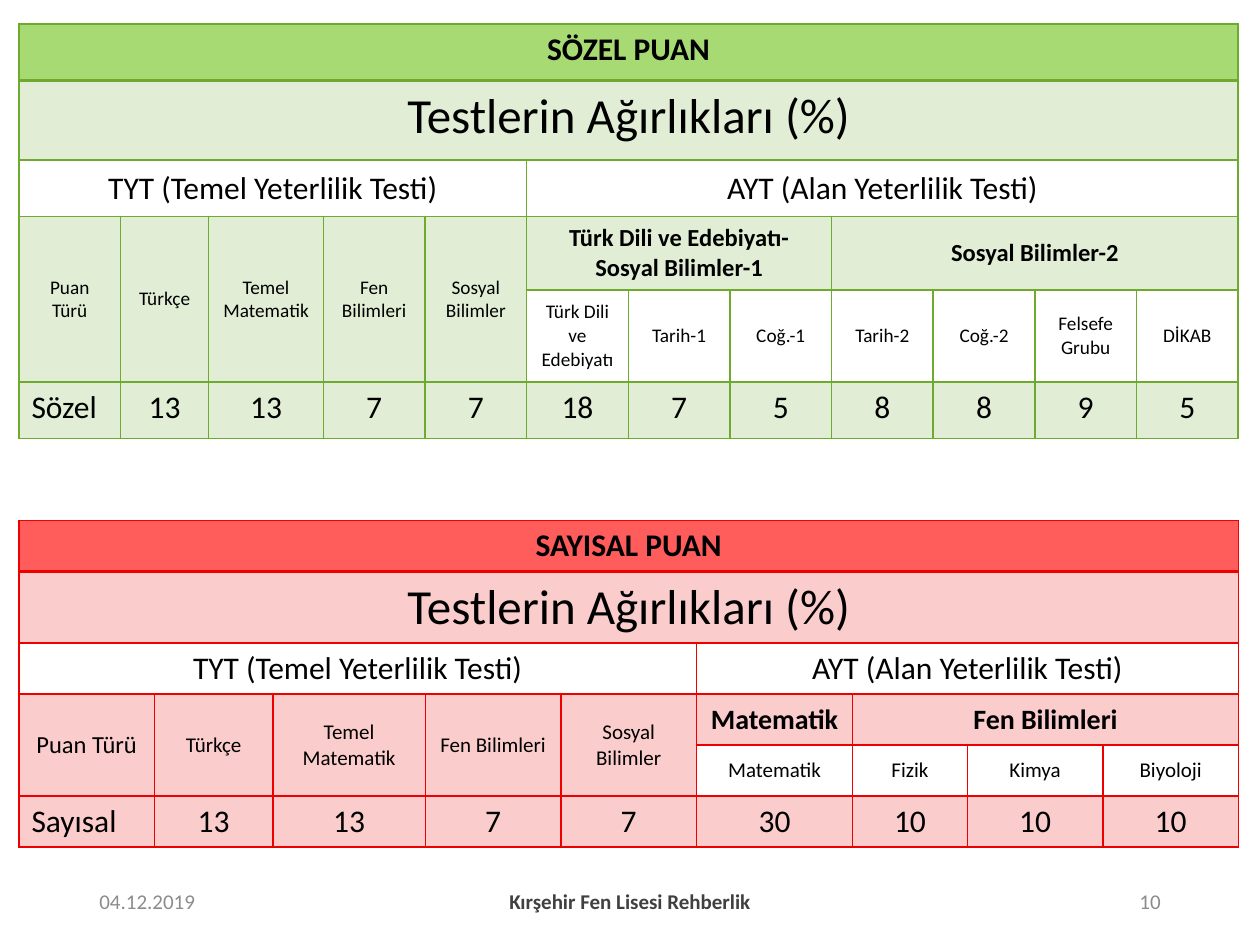
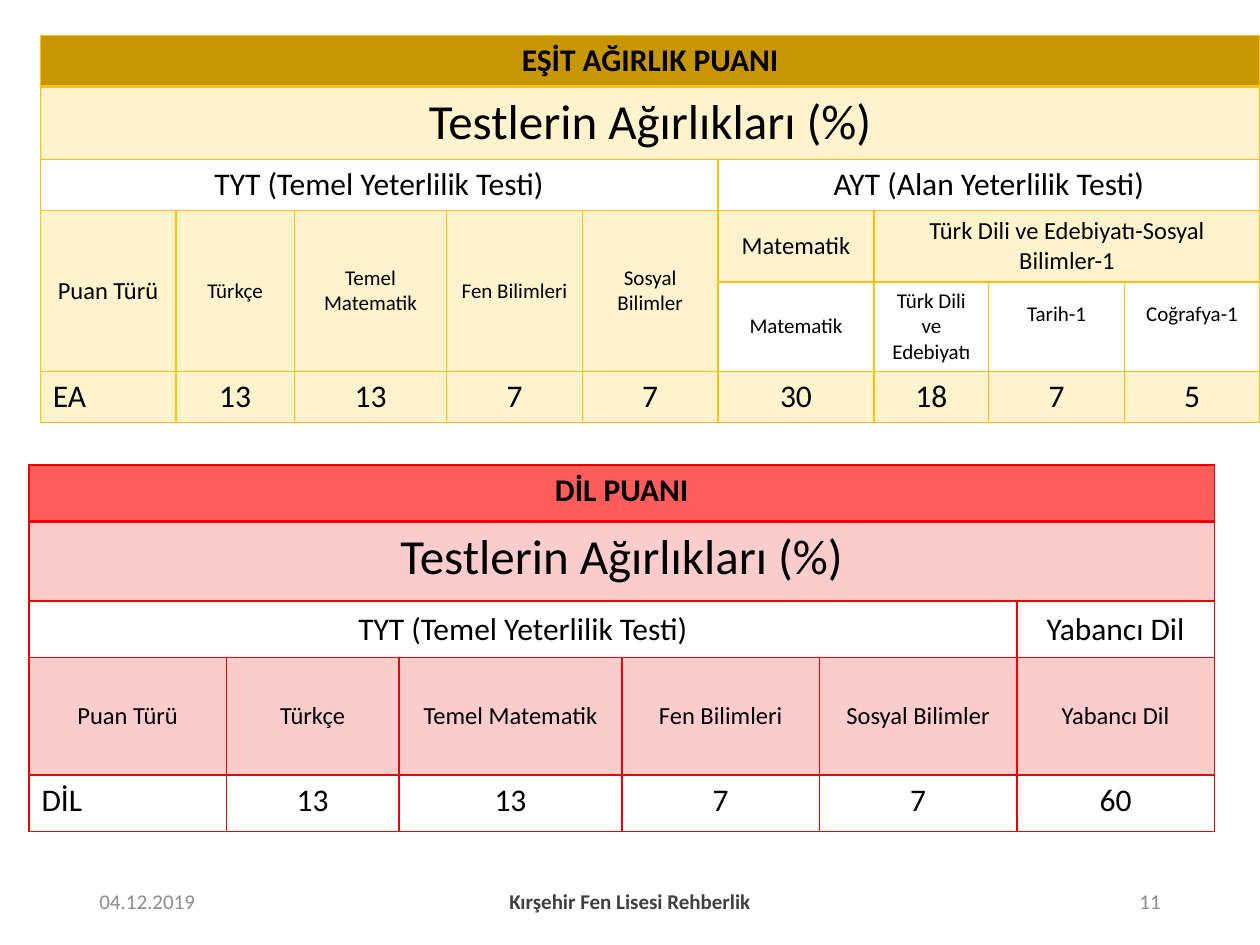
from dataclasses import dataclass

from lxml.etree import Element, SubElement
from pptx import Presentation
from pptx.dml.color import RGBColor
from pptx.enum.text import MSO_ANCHOR, PP_ALIGN
from pptx.oxml.ns import qn
from pptx.util import Inches, Pt

BLACK = RGBColor(0x00, 0x00, 0x00)
DARK_GREY = RGBColor(0x40, 0x40, 0x40)
GREY = RGBColor(0x8C, 0x8C, 0x8C)
GREEN = RGBColor(0x6D, 0xAA, 0x2D)
LIGHT_GREEN = RGBColor(0xA8, 0xDA, 0x73)
RED = RGBColor(0xEF, 0x00, 0x00)
LIGHT_RED = RGBColor(0xFF, 0x5C, 0x5C)
YELLOW = RGBColor(0xFF, 0xC3, 0x0B)
DARK_YELLOW = RGBColor(0xC8, 0x96, 0x00)

GRID_COLUMNS, GRID_ROWS = 100, 75
WEIGHTS_HEADING = "Testlerin Ağırlıkları (%)"
TYT = "TYT (Temel Yeterlilik Testi)"
AYT = "AYT (Alan Yeterlilik Testi)"
TYT_HEADINGS = ["Puan Türü", "Türkçe", "Temel Matematik", "Fen Bilimleri", "Sosyal Bilimler"]
TYT_WEIGHTS = [13, 13, 7, 7]
NINE_COLUMNS = [10.76, 9.4, 12.1, 10.76, 10.76, 12.4, 9.1, 10.76, 10.76]


@dataclass
class ScoreTable:
    title: str
    label: str
    band: RGBColor
    accent: RGBColor
    left: float
    top: float
    columns: list
    rows: list
    second_part: str
    weights: list
    groups: list
    heading_sizes: list
    group_size: int = 14
    group_bold: bool = False
    test_size: int = 12
    tint_weights: bool = True
    raised_tests: tuple = ()


class Deck:
    font_name = "Calibri"
    tint_alpha = 20

    def __init__(self):
        self.presentation = Presentation()
        self.presentation.slide_width = Inches(10)
        self.presentation.slide_height = Inches(7.5)
        self.slide = None

    def across(self, columns):
        return int(self.presentation.slide_width * columns / GRID_COLUMNS)

    def down(self, rows):
        return int(self.presentation.slide_height * rows / GRID_ROWS)

    def add_slide(self, number):
        self.slide = self.presentation.slides.add_slide(self.presentation.slide_layouts[6])
        self.footer("04.12.2019", 6.9, 22.5, PP_ALIGN.LEFT)
        self.footer("Kırşehir Fen Lisesi Rehberlik", 33.1, 33.8, PP_ALIGN.CENTER, DARK_GREY, True)
        self.footer(str(number), 70.6, 22.5, PP_ALIGN.RIGHT)

    def style(self, paragraph, size, color=BLACK, bold=False, align=PP_ALIGN.CENTER):
        paragraph.alignment = align
        font = paragraph.font
        font.name, font.size, font.bold = self.font_name, Pt(size), bold
        font.color.rgb = color

    def footer(self, text, left, width, align, color=GREY, bold=False):
        box = self.slide.shapes.add_textbox(
            self.across(left), self.down(69.5), self.across(width), self.down(4))
        frame = box.text_frame
        frame.word_wrap = True
        frame.vertical_anchor = MSO_ANCHOR.MIDDLE
        frame.text = text
        self.style(frame.paragraphs[0], 12, color, bold, align)

    def borders(self, cell, color, bottom_width):
        properties = cell._tc.get_or_add_tcPr()
        for index, side in enumerate(("lnL", "lnR", "lnT", "lnB")):
            width = bottom_width if side == "lnB" else 1
            line = Element(qn(f"a:{side}"), w=str(Pt(width)))
            SubElement(SubElement(line, qn("a:solidFill")), qn("a:srgbClr"), val=str(color))
            properties.insert(index, line)

    def tint(self, cell, color):
        cell.fill.solid()
        cell.fill.fore_color.rgb = color
        color_element = cell._tc.tcPr.find(f".//{qn('a:solidFill')}/{qn('a:srgbClr')}")
        SubElement(color_element, qn("a:alpha"), val=str(self.tint_alpha * 1000))

    def cell(self, table, row, column, text, size, span=(1, 1), bold=False,
             tint=None, anchor=MSO_ANCHOR.MIDDLE, align=PP_ALIGN.CENTER):
        cell = table.cell(row, column)
        if span != (1, 1):
            cell.merge(table.cell(row + span[0] - 1, column + span[1] - 1))
        cell.text = str(text)
        cell.vertical_anchor = anchor
        self.style(cell.text_frame.paragraphs[0], size, bold=bold, align=align)
        if tint is not None:
            self.tint(cell, tint)
        return cell

    def empty_table(self, score):
        shape = self.slide.shapes.add_table(
            len(score.rows), len(score.columns), self.across(score.left), self.down(score.top),
            self.across(sum(score.columns)), self.down(sum(score.rows)))
        table = shape.table
        table.first_row = table.horz_banding = False
        for column, width in zip(table.columns, score.columns):
            column.width = self.across(width)
        for row, height in zip(table.rows, score.rows):
            row.height = self.down(height)
        for cell in table.iter_cells():
            cell.fill.background()
        return table

    def score_table(self, score):
        table = self.empty_table(score)
        last, count, tyt_count = len(score.rows) - 1, len(score.columns), len(TYT_HEADINGS)
        accent = score.accent
        title = self.cell(table, 0, 0, score.title, 18, (1, count), True, anchor=MSO_ANCHOR.TOP)
        title.fill.solid()
        title.fill.fore_color.rgb = score.band
        self.cell(table, 1, 0, WEIGHTS_HEADING, 28, (1, count), tint=accent,
                  anchor=MSO_ANCHOR.TOP)
        self.cell(table, 2, 0, TYT, 18, (1, tyt_count))
        self.cell(table, 2, tyt_count, score.second_part, 18, (1, count - tyt_count))
        for column, (heading, size) in enumerate(zip(TYT_HEADINGS, score.heading_sizes)):
            self.cell(table, 3, column, heading, size, (last - 3, 1), tint=accent)

        column = tyt_count
        for group, tests in score.groups:
            self.cell(table, 3, column, group, score.group_size, (1, max(1, len(tests))),
                      score.group_bold, accent)
            for offset, test in enumerate(tests):
                cell = self.cell(table, 4, column + offset, test, score.test_size)
                if test in score.raised_tests:
                    cell.margin_bottom = self.down(2.5)
            column += len(tests)

        for column, value in enumerate([score.label] + TYT_WEIGHTS + score.weights):
            self.cell(table, last, column, value, 18, tint=accent if score.tint_weights else None,
                      anchor=MSO_ANCHOR.TOP,
                      align=PP_ALIGN.CENTER if column else PP_ALIGN.LEFT)
        for index, cell in enumerate(table.iter_cells()):
            self.borders(cell, accent, 2 if index < count else 1)


VERBAL = ScoreTable(
    "SÖZEL PUAN", "Sözel", LIGHT_GREEN, GREEN, 1.5, 1.9,
    [8.07, 7, 9.1] + [8.07] * 9, [4.5, 6.3, 4.5, 5.8, 7.3, 4.5],
    AYT, [18, 7, 5, 8, 8, 9, 5],
    [("Türk Dili ve Edebiyatı- Sosyal Bilimler-1",
      ["Türk Dili ve Edebiyatı", "Tarih-1", "Coğ.-1"]),
     ("Sosyal Bilimler-2", ["Tarih-2", "Coğ.-2", "Felsefe Grubu", "DİKAB"])],
    [11] * 5, group_bold=True, test_size=11)

NUMERICAL = ScoreTable(
    "SAYISAL PUAN", "Sayısal", LIGHT_RED, RED, 1.5, 41.3,
    NINE_COLUMNS, [4.05, 5.7, 4.05, 4.05, 4.05, 4.05],
    AYT, [30, 10, 10, 10],
    [("Matematik", ["Matematik"]), ("Fen Bilimleri", ["Fizik", "Kimya", "Biyoloji"])],
    [14] + [12] * 4, group_size=16, group_bold=True)

EQUAL_WEIGHT = ScoreTable(
    "EŞİT AĞIRLIK PUANI", "EA", DARK_YELLOW, YELLOW, 3.2, 2.8,
    NINE_COLUMNS, [4.05, 5.8, 4.05, 5.7, 7.1, 4.05],
    AYT, [30, 18, 7, 5],
    [("Matematik", ["Matematik"]),
     ("Türk Dili ve Edebiyatı-Sosyal Bilimler-1",
      ["Türk Dili ve Edebiyatı", "Tarih-1", "Coğrafya-1"])],
    [14] + [12] * 4, raised_tests=("Tarih-1", "Coğrafya-1"))

LANGUAGE = ScoreTable(
    "DİL PUANI", "DİL", LIGHT_RED, RED, 2.3, 36.9,
    [15.67, 13.7, 17.7, 15.67, 15.67, 15.67], [4.5, 6.3, 4.5, 9.3, 4.5],
    "Yabancı Dil", [60], [("Yabancı Dil", [])],
    [14] * 5, tint_weights=False)


def main():
    deck = Deck()
    for number, scores in ((10, (VERBAL, NUMERICAL)), (11, (LANGUAGE, EQUAL_WEIGHT))):
        deck.add_slide(number)
        for score in scores:
            deck.score_table(score)
    deck.presentation.save("out.pptx")


if __name__ == "__main__":
    main()
